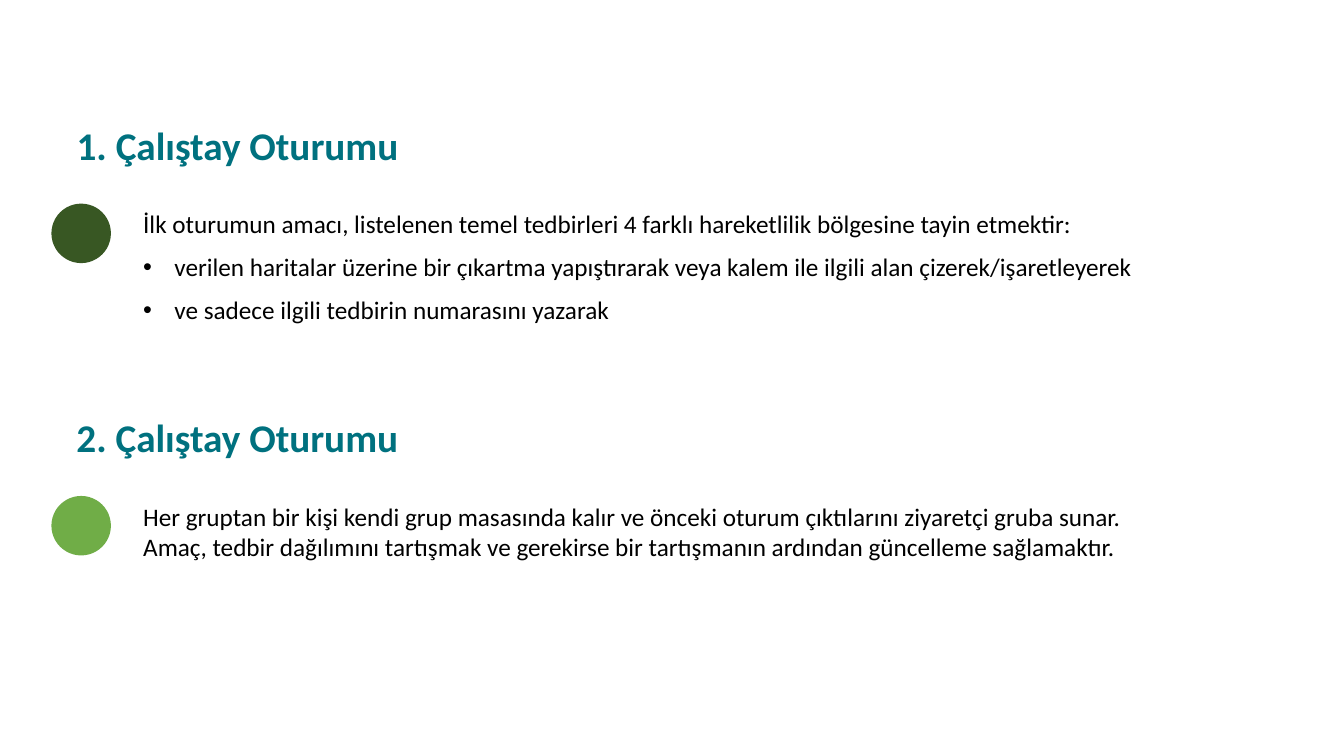
from lxml.etree import SubElement
from pptx import Presentation
from pptx.dml.color import RGBColor
from pptx.enum.shapes import MSO_SHAPE
from pptx.enum.text import MSO_ANCHOR, MSO_AUTO_SIZE, PP_ALIGN
from pptx.oxml.ns import qn
from pptx.util import Inches, Pt

TEAL, BLACK = "00717F", "000000"
HANG = Inches(0.31)


def tint(code):
    return RGBColor.from_string(code)


def place(shape, left, top, width, height):
    shape.left, shape.top = Inches(left), Inches(top)
    shape.width, shape.height = Inches(width), Inches(height)
    frame = shape.text_frame
    frame.word_wrap = True
    frame.auto_size = MSO_AUTO_SIZE.NONE
    frame.vertical_anchor = MSO_ANCHOR.TOP
    return frame


def style(para, size, color, bold=False):
    para.alignment = PP_ALIGN.LEFT
    font = para.font
    font.name, font.size, font.bold = "Calibri", Pt(size), bold
    font.color.rgb = tint(color)


def set_bullet(para, shown):
    props = para._p.get_or_add_pPr()
    props.set("marL", str(HANG if shown else 0))
    props.set("indent", str(-HANG if shown else 0))
    if shown:
        SubElement(props, qn("a:buFont")).set("typeface", "Arial")
        SubElement(props, qn("a:buChar")).set("char", "•")
    else:
        SubElement(props, qn("a:buNone"))


def add_head(shape, top, text):
    frame = place(shape, 0.66, top, 11.65, 0.57)
    frame.text = text
    style(frame.paragraphs[0], 28, TEAL, True)


def add_body(shape, top, width, height, after, lead, points=()):
    frame = place(shape, 1.32, top, width, height)
    frame.text = "\n".join([lead, *points])
    for i, para in enumerate(frame.paragraphs):
        para.space_before = Pt(6 if i else 0)
        para.space_after = Pt(after)
        set_bullet(para, i > 0)
        style(para, 18, BLACK)


def add_dot(slide, top, color):
    dot = slide.shapes.add_shape(MSO_SHAPE.OVAL, Inches(0.51), Inches(top),
                                 Inches(0.59), Inches(0.59))
    dot.shadow.inherit = False
    dot.fill.solid()
    dot.fill.fore_color.rgb = tint(color)
    dot.line.fill.background()


def main():
    deck = Presentation()
    deck.slide_width, deck.slide_height = Inches(13.33), Inches(7.5)
    # Layout with a title and two content placeholders
    slide = deck.slides.add_slide(deck.slide_layouts[3])
    title, first, second = slide.placeholders

    # First session
    add_head(title, 1.15, "1. Çalıştay Oturumu")
    add_dot(slide, 2.02, "385723")
    add_body(first, 2.02, 11.5, 1.26, 3,
             "İlk oturumun amacı, listelenen temel tedbirleri 4 farklı "
             "hareketlilik bölgesine tayin etmektir:",
             ["verilen haritalar üzerine bir çıkartma yapıştırarak veya "
              "kalem ile ilgili alan çizerek/işaretleyerek",
              "ve sadece ilgili tedbirin numarasını yazarak"])

    # Second session
    box = slide.shapes.add_textbox(0, 0, 0, 0)
    add_head(box, 4.05, "2. Çalıştay Oturumu")
    add_dot(slide, 4.92, "70AD47")
    add_body(second, 4.92, 10.12, 0.71, 6,
             "Her gruptan bir kişi kendi grup masasında kalır ve önceki "
             "oturum çıktılarını ziyaretçi gruba sunar. Amaç, tedbir "
             "dağılımını tartışmak ve gerekirse bir tartışmanın ardından "
             "güncelleme sağlamaktır.")

    deck.save("out.pptx")


if __name__ == "__main__":
    main()
